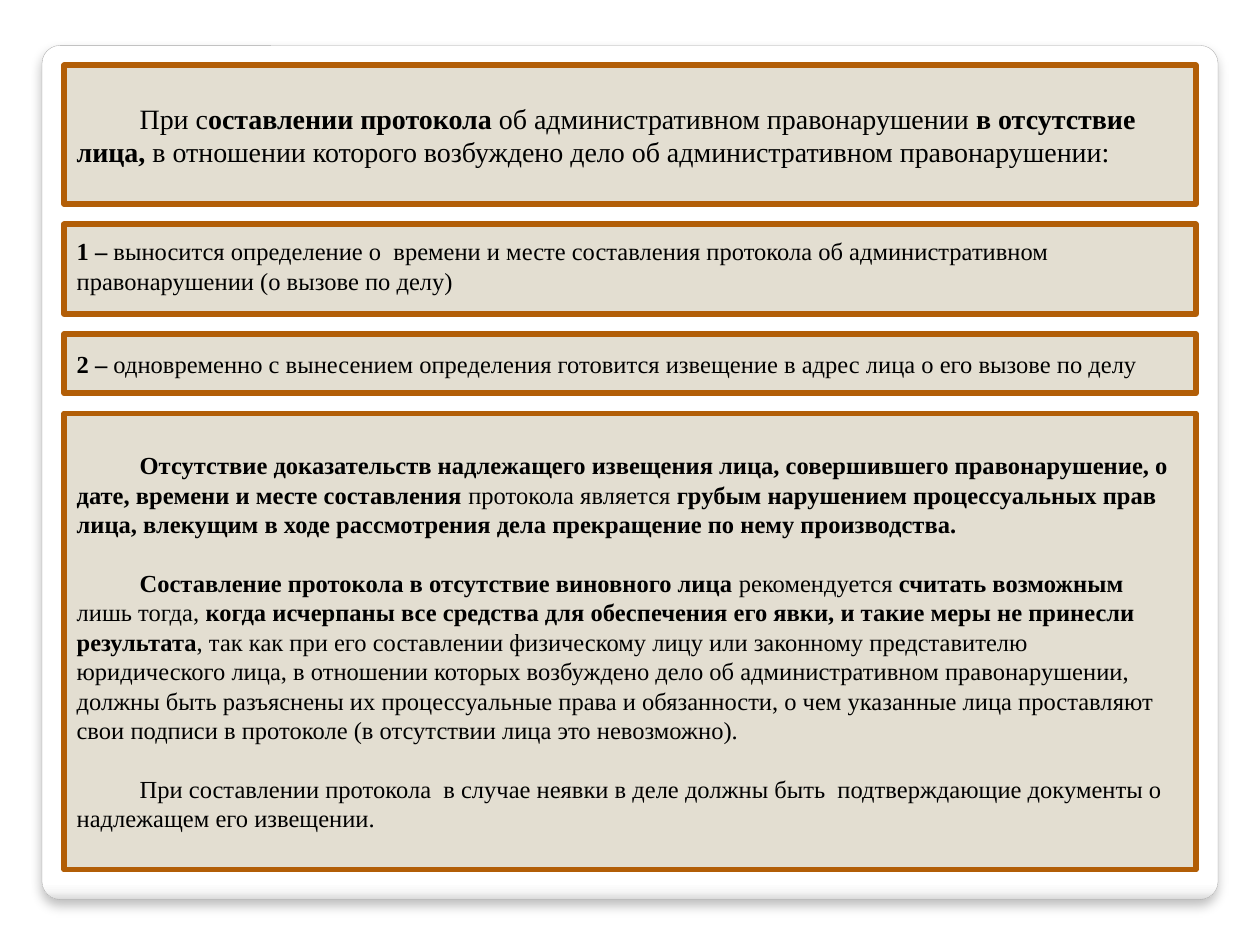
from dataclasses import dataclass

from lxml import etree
from pptx import Presentation
from pptx.dml.color import RGBColor
from pptx.enum.shapes import MSO_SHAPE
from pptx.enum.text import MSO_ANCHOR, PP_ALIGN
from pptx.oxml import parse_xml
from pptx.oxml.ns import nsdecls
from pptx.util import Pt

RECTANGLE = MSO_SHAPE.RECTANGLE
ROUNDED = MSO_SHAPE.ROUNDED_RECTANGLE
MIDDLE = MSO_ANCHOR.MIDDLE
LEFT = PP_ALIGN.LEFT


@dataclass(frozen=True)
class Theme:
    font: str = "Times New Roman"
    text: RGBColor = RGBColor(0x00, 0x00, 0x00)
    box_fill: RGBColor = RGBColor(0xE3, 0xDE, 0xD1)
    box_line: RGBColor = RGBColor(0xB2, 0x5E, 0x07)
    panel_line: RGBColor = RGBColor(0xA4, 0xA4, 0xA4)
    panel_stops: tuple = ((0, "FFFFFF"), (98, "FFFFFF"), (99, "F7F7F7"), (100, "DADADA"))
    heading_size: float = 16
    body_size: float = 14


THEME = Theme()

# Each paragraph is a list of (text, bold) runs.
HEADING = [[
    ("При с", False),
    ("оставлении протокола ", True),
    ("об административном правонарушении ", False),
    ("в отсутствие лица, ", True),
    ("в отношении которого возбуждено дело об административном правонарушении:", False),
]]
STEP_ONE = [[
    ("1 – ", True),
    ("выносится определение о  времени и месте составления протокола об "
     "административном правонарушении (о вызове по делу)", False),
]]
STEP_TWO = [[
    ("2 –", True),
    (" одновременно с вынесением определения готовится извещение в адрес лица "
     "о его вызове по делу", False),
]]
EXPLANATION = [
    [
        ("Отсутствие доказательств надлежащего извещения лица, совершившего "
         "правонарушение, о дате, времени и месте составления", True),
        (" протокола является ", False),
        ("грубым нарушением процессуальных прав лица, влекущим в ходе рассмотрения "
         "дела прекращение по нему производства.", True),
    ],
    [
        ("Составление протокола в отсутствие виновного лица ", True),
        ("рекомендуется ", False),
        ("считать возможным ", True),
        ("лишь тогда, ", False),
        ("когда исчерпаны все средства для обеспечения его явки, и такие меры "
         "не принесли результата", True),
        (", так как при его составлении физическому лицу или законному представителю "
         "юридического лица, в отношении которых возбуждено дело об административном "
         "правонарушении, должны быть разъяснены их процессуальные права и обязанности, "
         "о чем указанные лица проставляют свои подписи в протоколе (в отсутствии лица "
         "это невозможно).", False),
    ],
    [
        ("При составлении протокола  в случае неявки в деле должны быть  "
         "подтверждающие документы о надлежащем его извещении.", False),
    ],
]


def add_panel(slide, left, top, width, height):
    """Rounded white panel with a grey lower edge and a soft shadow."""
    panel = slide.shapes.add_shape(ROUNDED, left, top, width, height)
    panel.adjustments[0] = 0.021
    panel.line.color.rgb = THEME.panel_line
    panel.line.width = Pt(0.16)
    panel.fill.gradient()
    panel.fill.gradient_angle = 270
    stops = panel.fill._fill._gradFill.gsLst
    for stop in list(stops):
        stops.remove(stop)
    for position, color in THEME.panel_stops:
        stops.append(parse_xml(
            f'<a:gs {nsdecls("a")} pos="{position * 1000}"><a:srgbClr val="{color}"/></a:gs>'))
    panel.shadow.inherit = False
    effects = panel._element.spPr.find("{*}effectLst")
    effects.append(etree.fromstring(
        f'<a:outerShdw {nsdecls("a")} blurRad="{Pt(6)}" dist="{Pt(4)}" dir="5400000" '
        'algn="t" rotWithShape="0"><a:srgbClr val="000000"><a:alpha val="25000"/>'
        '</a:srgbClr></a:outerShdw>'))


def add_text_box(slide, left, top, width, height, paragraphs, size, indent=0, raise_by=0):
    """Framed box with vertically centred text, lifted by raise_by points."""
    box = slide.shapes.add_shape(RECTANGLE, left, top, width, height)
    box.shadow.inherit = False
    box.fill.solid()
    box.fill.fore_color.rgb = THEME.box_fill
    box.line.color.rgb = THEME.box_line
    box.line.width = Pt(3.35)
    frame = box.text_frame
    frame.word_wrap = True
    frame.vertical_anchor = MIDDLE
    frame.margin_bottom = Pt(3.6 + 2 * raise_by)
    for index, runs in enumerate(paragraphs):
        paragraph = frame.add_paragraph() if index else frame.paragraphs[0]
        paragraph.alignment = LEFT
        paragraph.space_before = Pt(size * 1.2 if index else 0)
        paragraph._p.get_or_add_pPr().set("indent", str(Pt(indent)))
        for text, bold in runs:
            run = paragraph.add_run()
            run.text = text
            run.font.name = THEME.font
            run.font.size = Pt(size)
            run.font.bold = bold
            run.font.color.rgb = THEME.text


def add_box_stack(slide, left, top, width, gap):
    rows = [
        (79.2, HEADING, THEME.heading_size, 36, 0),
        (51.1, STEP_ONE, THEME.body_size, 0, 2),
        (33.8, STEP_TWO, THEME.body_size, 0, 0),
        (260.6, EXPLANATION, THEME.body_size, 36, 0),
    ]
    for height, paragraphs, size, indent, raise_by in rows:
        add_text_box(slide, left, top, width, Pt(height), paragraphs, size, indent, raise_by)
        top += Pt(height) + gap


def main():
    presentation = Presentation()
    presentation.slide_width = Pt(720)
    presentation.slide_height = Pt(540)
    slide = presentation.slides.add_slide(presentation.slide_layouts[6])
    add_panel(slide, Pt(24), Pt(26), Pt(672), Pt(488))
    add_box_stack(slide, Pt(36.7), Pt(37.4), Pt(646.6), Pt(11.6))
    presentation.save("out.pptx")


if __name__ == "__main__":
    main()
